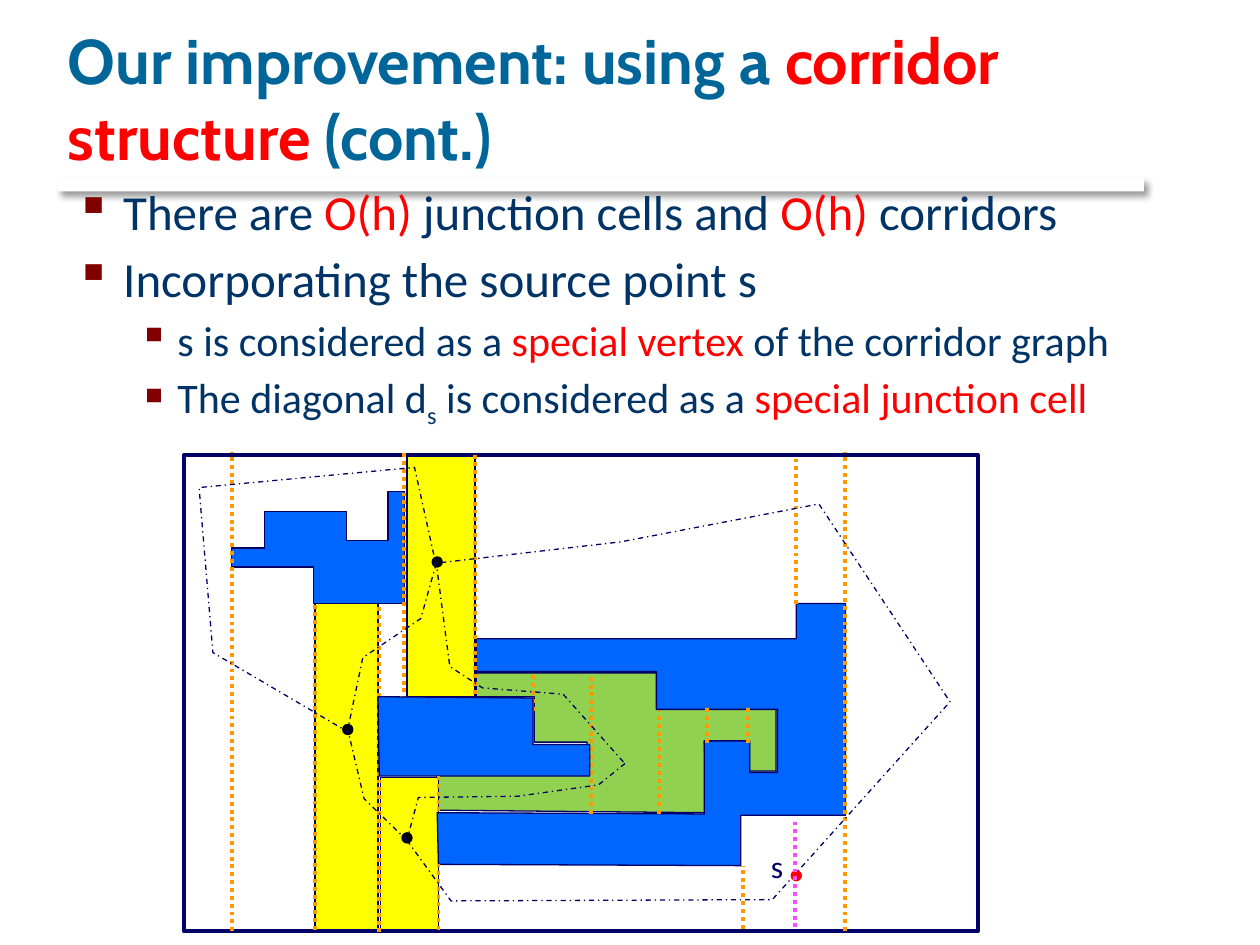
from dataclasses import dataclass

from lxml.etree import SubElement
from pptx import Presentation
from pptx.dml.color import RGBColor as Rgb
from pptx.enum.dml import MSO_LINE as Dash
from pptx.enum.shapes import MSO_CONNECTOR as Connector, MSO_SHAPE as Preset
from pptx.enum.text import MSO_ANCHOR as Anchor, MSO_AUTO_SIZE as AutoSize
from pptx.oxml.ns import qn
from pptx.util import Inches, Pt


@dataclass(frozen=True)
class Theme:
    title: str = "006699"
    body: str = "003366"
    accent: str = "FF0000"
    bullet: str = "800000"
    outline: str = "000066"
    obstacle: str = "0066FF"
    corridor: str = "92D050"
    junction: str = "FFFF00"
    diagonal: str = "FF9900"
    source_diagonal: str = "F84EFC"
    black: str = "000000"
    white: str = "FFFFFF"
    heading_font: str = "Cabin"
    text_font: str = "Calibri"
    title_size: int = 36
    level_sizes: tuple = (28, 24)
    label_size: int = 18
    thin: float = 0.75
    thick: float = 2.25


THEME = Theme()
LEVEL_INDENTS = ((0.38, -0.38), (0.81, -0.31))
LEVEL_GAPS = (4.8, 4)

TITLE = [("Our improvement: using a ", THEME.title), ("corridor structure ", THEME.accent),
         ("(cont.)", THEME.title)]
BULLETS = [
    (0, [("There are ", THEME.body), ("O(h)", THEME.accent),
         (" junction cells and ", THEME.body), ("O(h) ", THEME.accent),
         ("corridors", THEME.body)]),
    (0, [("Incorporating the source point s", THEME.body)]),
    (1, [("s is considered as a ", THEME.body), ("special vertex ", THEME.accent),
         ("of the corridor graph", THEME.body)]),
    (1, [("The diagonal d", THEME.body), ("s", THEME.body, -25),
         (" is considered as a ", THEME.body), ("special junction cell", THEME.accent)]),
]

CORRIDOR = [(3.46, 6.43), (5.61, 6.45), (5.59, 5.88), (5.95, 5.88), (5.95, 6.12),
            (6.16, 6.12), (6.16, 5.61), (5.22, 5.61), (5.22, 5.34), (3.78, 5.34),
            (3.78, 5.53), (4.24, 5.53), (4.24, 5.89), (4.66, 5.89), (4.66, 6.15),
            (3.47, 6.15)]
JUNCTION_CELLS = [(3.02, 6.17, 0.46, 1.21), (3.23, 3.6, 0.54, 1.93), (2.5, 4.79, 0.5, 2.59)]
FRAME = (1.46, 3.61, 6.3, 3.78)
UPPER_OBSTACLE = [(1.84, 4.33), (1.84, 4.5), (2.49, 4.5), (2.49, 4.79), (3.21, 4.79),
                  (3.21, 3.9), (3.08, 3.9), (3.08, 4.29), (2.75, 4.29), (2.75, 4.06),
                  (2.1, 4.06), (2.1, 4.35), (1.84, 4.35)]
RIGHT_OBSTACLE = [(3.77, 5.17), (3.77, 5.33), (5.21, 5.33), (5.21, 5.63), (6.17, 5.63),
                  (6.17, 6.13), (5.95, 6.13), (5.95, 5.88), (5.59, 5.88), (5.59, 6.46),
                  (3.47, 6.45), (3.48, 6.86), (5.88, 6.87), (5.88, 6.47), (6.71, 6.47),
                  (6.71, 4.79), (6.32, 4.79), (6.32, 5.07), (3.78, 5.07), (3.78, 5.36)]
MIDDLE_OBSTACLE = [(3, 5.53), (4.23, 5.54), (4.23, 5.91), (4.68, 5.91), (4.68, 6.16),
                   (3.01, 6.16)]
DIAGONALS = [(3.77, 5.63, 3.61), (3.21, 5.62, 3.59), (6.71, 7.39, 3.59), (1.84, 7.39, 3.59),
             (3.01, 7.4, 4.79), (2.5, 7.38, 4.77), (3.48, 7.38, 6.86), (5.9, 7.37, 6.87),
             (4.69, 6.46, 5.35), (5.23, 6.46, 5.64), (4.23, 5.64, 5.35), (5.61, 5.9, 5.62),
             (5.94, 5.9, 5.62), (6.32, 4.79, 3.61)]
FRONT_DIAGONALS = [(3.48, 6.44, 6.15), (4.69, 6.46, 6.17)]
GRAPH_NODES = [(3.19, 6.61), (2.72, 5.75), (3.43, 4.42)]
GRAPH_EDGES = [
    [(3.23, 6.67), (3.58, 7.15), (6.13, 7.14), (7.54, 5.57), (6.5, 4), (4.93, 4.3),
     (3.46, 4.47)],
    [(3.46, 4.45), (3.57, 5.29), (3.83, 5.46), (4.47, 5.51), (4.95, 6.05)],
    [(4.96, 6.06), (4.75, 6.23), (4.11, 6.32), (3.32, 6.33), (3.24, 6.63)],
    [(3.23, 6.67), (2.89, 6.34), (2.76, 5.79), (2.88, 5.22), (3.34, 4.91), (3.46, 4.48),
     (3.29, 3.71), (1.58, 3.87), (1.69, 5.18), (2.78, 5.82)],
]


def apply(target, values):
    for name, value in values.items():
        setattr(target, name, value)


def paint(shape, fill=None, line=None, width=THEME.thin, dash=None):
    shape.shadow.inherit = False
    if fill:
        shape.fill.solid()
        shape.fill.fore_color.rgb = Rgb.from_string(fill)
    else:
        shape.fill.background()
    if line:
        stroke(shape.line, line, width, dash)
    else:
        shape.line.fill.background()


def stroke(line, color, width, dash=None):
    line.color.rgb = Rgb.from_string(color)
    apply(line, {"width": Pt(width), "dash_style": dash})


def add_preset(page, preset, at, **style):
    shape = page.shapes.add_shape(preset, *map(Inches, at))
    paint(shape, **style)
    return shape


def add_outline(page, points, close=True, **style):
    start, *rest = [(Inches(x), Inches(y)) for x, y in points]
    builder = page.shapes.build_freeform(*start, scale=1.0)
    builder.add_line_segments(rest, close=close)
    paint(builder.convert_to_shape(), line=THEME.outline, **style)


def add_diagonal(page, x, bottom, top, color=THEME.diagonal):
    ends = map(Inches, (x, bottom, x, top))
    line = page.shapes.add_connector(Connector.STRAIGHT, *ends)
    stroke(line.line, color, THEME.thick, Dash.ROUND_DOT)
    SubElement(line._element.spPr, qn("a:effectLst"))


def add_node(page, x, y, color):
    add_preset(page, Preset.OVAL, (x, y, 0.08, 0.08), fill=color, line=color)


def add_title_rule(page):
    rule = add_preset(page, Preset.RECTANGLE, (0.45, 1.41, 8.63, 0.11), fill=THEME.white)
    effects = rule._element.spPr.find(qn("a:effectLst"))
    shadow = SubElement(effects, qn("a:outerShdw"), blurRad=str(Pt(4)), dist=str(Pt(3)),
                        dir="2700000", algn="tl", rotWithShape="0")
    color = SubElement(shadow, qn("a:srgbClr"), val=THEME.black)
    SubElement(color, qn("a:alpha"), val="40000")


def add_box(page, at, **frame_format):
    box = page.shapes.add_textbox(*map(Inches, at)).text_frame
    apply(box, {"word_wrap": True, **frame_format})
    return box


def add_span(para, text, color, baseline=0, **font_format):
    span = para.add_run()
    span.text = text
    apply(span.font, font_format)
    span.font.color.rgb = Rgb.from_string(color)
    if baseline:
        span._r.get_or_add_rPr().set("baseline", str(baseline * 1000))


def add_bullet(para, level):
    margin, indent = map(Inches, LEVEL_INDENTS[level])
    apply(para, {"level": level, "space_before": Pt(LEVEL_GAPS[level])})
    properties = para._p.get_or_add_pPr()
    properties.set("marL", str(margin))
    properties.set("indent", str(indent))
    color = SubElement(properties, qn("a:buClr"))
    SubElement(color, qn("a:srgbClr"), val=THEME.bullet)
    SubElement(properties, qn("a:buChar"), char="▪")


def add_text(page):
    title = add_box(page, (0.44, 0.17, 8.5, 1.25), vertical_anchor=Anchor.BOTTOM)
    for part in TITLE:
        add_span(title.paragraphs[0], *part, name=THEME.heading_font,
                 size=Pt(THEME.title_size), bold=True)
    body = add_box(page, (0.5, 1.39, 9.07, 1.68))
    for index, (level, parts) in enumerate(BULLETS):
        para = body.add_paragraph() if index else body.paragraphs[0]
        add_bullet(para, level)
        for part in parts:
            add_span(para, *part, name=THEME.text_font, size=Pt(THEME.level_sizes[level]))


def add_diagram(page):
    add_outline(page, CORRIDOR, fill=THEME.corridor)
    for cell in JUNCTION_CELLS:
        add_preset(page, Preset.RECTANGLE, cell, fill=THEME.junction, line=THEME.outline)
    add_preset(page, Preset.RECTANGLE, FRAME, line=THEME.outline, width=THEME.thick)
    for obstacle in (UPPER_OBSTACLE, RIGHT_OBSTACLE):
        add_outline(page, obstacle, close=False, fill=THEME.obstacle)
    for diagonal in DIAGONALS:
        add_diagonal(page, *diagonal)
    add_outline(page, MIDDLE_OBSTACLE, fill=THEME.obstacle)
    for diagonal in FRONT_DIAGONALS:
        add_diagonal(page, *diagonal)
    for node in GRAPH_NODES:
        add_node(page, *node, THEME.black)
    for edge in GRAPH_EDGES:
        add_outline(page, edge, close=False, dash=Dash.DASH_DOT)


def add_source_point(page):
    label = add_box(page, (6.02, 6.67, 0.3, 0.4), word_wrap=False,
                    auto_size=AutoSize.SHAPE_TO_FIT_TEXT)
    add_span(label.paragraphs[0], "s", THEME.outline, name=THEME.text_font,
             size=Pt(THEME.label_size))
    add_node(page, 6.28, 6.91, THEME.accent)
    add_diagonal(page, 6.31, 7.36, 6.5, THEME.source_diagonal)


def main():
    deck = Presentation()
    apply(deck, {"slide_width": Inches(10), "slide_height": Inches(7.5)})
    page = deck.slides.add_slide(deck.slide_layouts[6])
    add_title_rule(page)
    add_text(page)
    add_diagram(page)
    add_source_point(page)
    deck.save("out.pptx")


if __name__ == "__main__":
    main()
